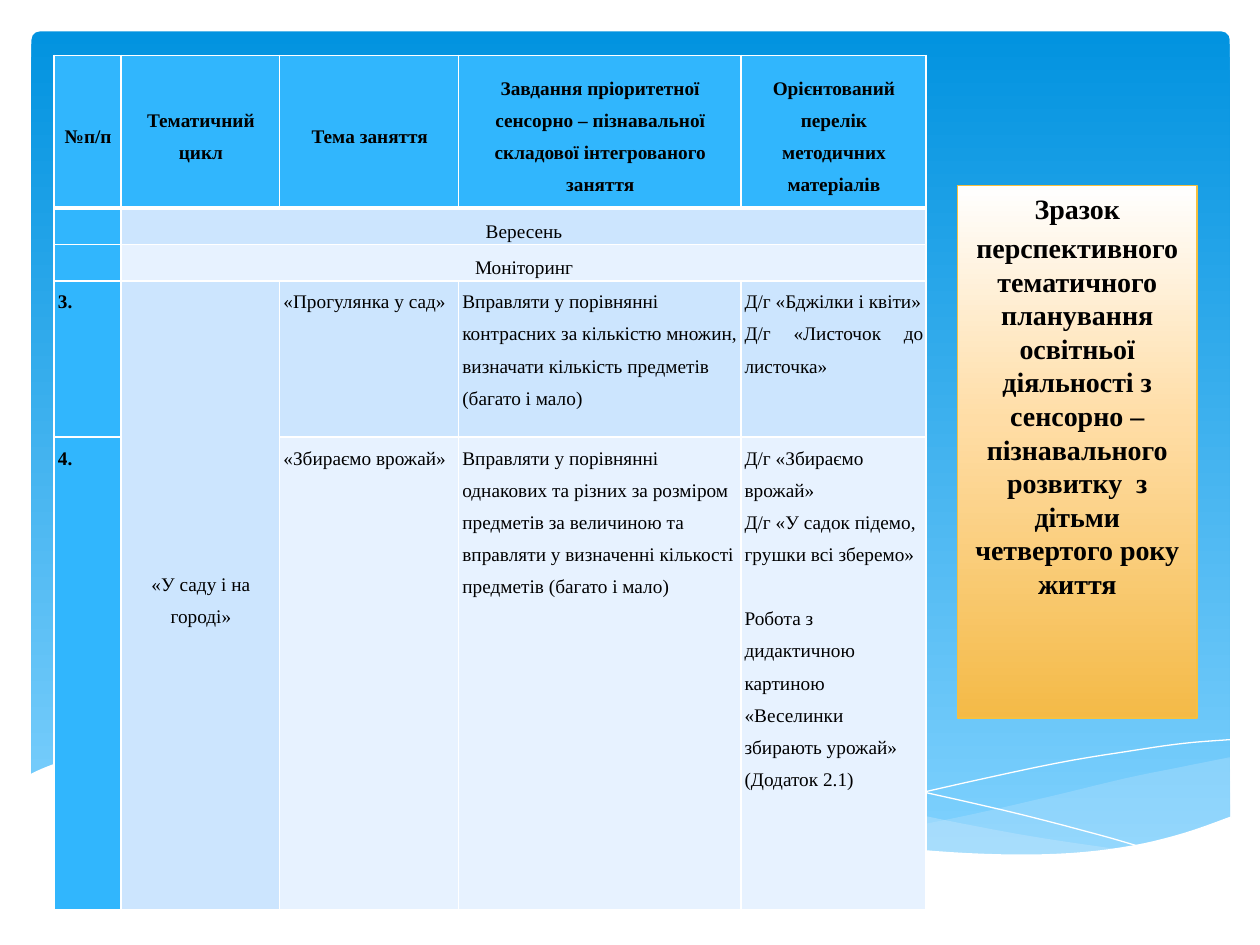
from lxml.etree import SubElement as Sub
from pptx import Presentation
from pptx.dml.color import RGBColor as RGB
from pptx.enum.shapes import MSO_SHAPE as Kind
from pptx.enum.text import MSO_ANCHOR as Anchor, PP_ALIGN as Align
from pptx.oxml.ns import qn
from pptx.util import Pt

PX = 9144  # EMU per px, 100 px to the inch
FONT = "Times New Roman"
INK = {
    "white": "FFFFFF", "black": "000000", "deep": "0293E0", "sky": "81D2FE",
    "mist": "C6E7FC", "head": "31B6FD", "band": "CCE5FE", "pale": "E7F2FF",
    "cream": "FFDDA6", "amber": "F4BA47", "gold": "F5C040",
}

COLS = [53, 126, 142, 224, 147]
ROWS = [121, 29, 29, 124, 375]
HEADS = [
    ["№п/п"],
    ["Тематичний", "цикл"],
    ["Тема заняття"],
    ["Завдання пріоритетної сенсорно – пізнавальної складової інтегрованого заняття"],
    ["Орієнтований перелік", "методичних матеріалів"],
]
BODY = [
    [[], ["Вересень"], [], [], []],
    [[], ["Моніторинг"], [], [], []],
    [["3."], ["«У саду і на", "городі»"], ["«Прогулянка у сад»"],
     ["Вправляти у порівнянні контрасних за кількістю множин, "
      "визначати кількість предметів (багато і мало)"],
     ["Д/г «Бджілки і квіти»", "Д/г «Листочок до листочка»"]],
    [["4."], [], ["«Збираємо врожай»"],
     ["Вправляти у порівнянні однакових та різних за розміром предметів за "
      "величиною та вправляти у визначенні кількості предметів (багато і мало)"],
     ["Д/г «Збираємо врожай»", "Д/г «У садок підемо, грушки всі зберемо»",
      "Робота з дидактичною картиною «Веселинки збирають урожай»",
      "(Додаток 2.1)"]],
]
TITLE = ["Зразок", "перспективного тематичного планування освітньої діяльності з "
         "сенсорно – пізнавального розвитку  з дітьми четвертого року життя"]

# Each wave is a list of runs; a run is smoothed, runs are joined by lines.
RIGHT = [[(976, 601), (936, 609), (892, 618), (834, 632), (754, 650), (662, 667)],
         [(662, 667), (719, 674), (782, 679), (836, 679), (882, 675),
          (922, 667), (951, 659), (977, 649)]]
LONG = [[(894, 675), (808, 662), (707, 642), (630, 624), (555, 607), (489, 596),
         (420, 589), (345, 588), (287, 593)],
        [(287, 593), (363, 604), (450, 624), (530, 642), (619, 660), (710, 674),
         (786, 680), (849, 679), (894, 675)]]
FALL = [[(310, 597), (363, 590), (433, 589), (511, 594), (609, 606), (696, 621),
         (796, 643), (870, 662), (908, 673)]]
RISE = [[(614, 659), (673, 643), (749, 625), (837, 606), (897, 596), (939, 590),
         (976, 587)]]
FRONT = [[(977, 648), (940, 661), (899, 671), (850, 677), (793, 678), (726, 674),
          (648, 664), (555, 647), (447, 622), (365, 604), (292, 592), (211, 586),
          (146, 587), (95, 593), (59, 601), (36, 609), (23, 615)],
         [(23, 731), (977, 731)]]


def smooth(run, steps=5):
    """Points of a Catmull-Rom curve through the run."""
    if len(run) < 3:
        return run
    pts = [run[0], *run, run[-1]]
    out = [run[0]]
    for quad in zip(pts, pts[1:], pts[2:], pts[3:]):
        for k in range(1, steps + 1):
            t = k / steps
            out.append(tuple(
                (2 * b + (c - a) * t + (2 * a - 5 * b + 4 * c - d) * t ** 2
                 + (3 * b - a - 3 * c + d) * t ** 3) / 2
                for a, b, c, d in zip(*quad)))
    return out


def write(frame, lines, size=11, bold=False, align=Align.LEFT, lead=None, gaps=()):
    """Fill the frame; gaps gives the space before a paragraph, by index."""
    frame.word_wrap = True
    gaps = dict(gaps)
    for i, line in enumerate(lines):
        para = frame.add_paragraph() if i else frame.paragraphs[0]
        para.alignment, para.line_spacing = align, lead
        if i in gaps:
            para.space_before = Pt(gaps[i])
        run = para.add_run()
        run.text = line
        run.font.name, run.font.size, run.font.bold = FONT, Pt(size), bold
        run.font.color.rgb = RGB.from_string(INK["black"])


class Deck:
    def __init__(self, wide, high):
        self.show = Presentation()
        self.show.slide_width, self.show.slide_height = wide * PX, high * PX
        self.slide = self.show.slides.add_slide(self.show.slide_layouts[6])
        self.shapes = self.slide.shapes

    def paint(self, shape, fill=None, alpha=None, line=None):
        shape.shadow.inherit = False
        if fill:
            shape.fill.solid()
            shape.fill.fore_color.rgb = RGB.from_string(INK[fill])
        else:
            shape.fill.background()
        if alpha:
            tint = shape._element.spPr.find(".//" + qn("a:srgbClr"))
            Sub(tint, qn("a:alpha"), val=str(alpha * 1000))
        if line:
            shape.line.color.rgb = RGB.from_string(INK[line])
            shape.line.width = Pt(0.75)
        else:
            shape.line.fill.background()

    def panel(self, kind, box, stops, line=None):
        """A shape with a gradient that runs from top to bottom."""
        shape = self.shapes.add_shape(kind, *(n * PX for n in box))
        self.paint(shape, line=line)
        shape.fill.gradient()
        shape.fill.gradient_angle = 270
        ramp = shape._element.spPr.find(".//" + qn("a:gsLst"))
        for old in list(ramp):
            ramp.remove(old)
        for pos, name in stops:
            stop = Sub(ramp, qn("a:gs"), pos=str(pos * 1000))
            Sub(stop, qn("a:srgbClr"), val=INK[name])
        return shape

    def wave(self, runs, **look):
        pts = [(x * PX, y * PX) for run in runs for x, y in smooth(run)]
        path = self.shapes.build_freeform(*pts[0])
        path.add_line_segments(pts[1:], close="fill" in look)
        self.paint(path.convert_to_shape(), **look)

    def edge(self, cell, head, under):
        props = cell._tc.get_or_add_tcPr()
        for i, side in enumerate("LRTB"):
            thick = 3 if (head and side == "B") or (under and side == "T") else 1
            line = Sub(props, qn("a:ln" + side), w=str(Pt(thick)))
            Sub(Sub(line, qn("a:solidFill")), qn("a:srgbClr"), val=INK["white"])
            props.insert(i, line)

    def table(self, left, top):
        grid = self.shapes.add_table(len(ROWS), len(COLS), left * PX, top * PX,
                                     sum(COLS) * PX, sum(ROWS) * PX).table
        for col, size in zip(grid.columns, COLS):
            col.width = size * PX
        for row, size in zip(grid.rows, ROWS):
            row.height = size * PX
        for r, row in enumerate([HEADS, *BODY]):
            for c, lines in enumerate(row):
                self.cell(grid.cell(r, c), r, c, lines)
        for r in (1, 2):
            grid.cell(r, 1).merge(grid.cell(r, 4))
        grid.cell(3, 1).merge(grid.cell(4, 1))

    def cell(self, cell, r, c, lines):
        head = r == 0
        mid = head or c == 1
        tone = "head" if head or c == 0 else "band" if r % 2 or c == 1 and r > 2 else "pale"
        cell.fill.solid()
        cell.fill.fore_color.rgb = RGB.from_string(INK[tone])
        cell.margin_left, cell.margin_right = 3 * PX, 2 * PX
        cell.margin_top = cell.margin_bottom = 0
        cell.vertical_anchor = Anchor.MIDDLE if mid else Anchor.TOP
        self.edge(cell, head, r == 1)
        align = Align.CENTER if mid else Align.JUSTIFY if (r, c) == (3, 4) else Align.LEFT
        if lines:
            write(cell.text_frame, lines, bold=head or c == 0, align=align, lead=1.5,
                  gaps={2: 18.4} if len(lines) > 2 else ())
        else:
            Sub(cell.text_frame.paragraphs[0]._p, qn("a:endParaRPr"), sz="1100")


def main():
    deck = Deck(1000, 750)
    back = deck.panel(Kind.ROUNDED_RECTANGLE, (25, 25, 951, 660),
                      [(0, "deep"), (100, "sky")])
    back.adjustments[0] = 0.01
    deck.wave(RIGHT, fill="mist", alpha=29)
    deck.wave(LONG, fill="mist", alpha=40)
    deck.wave(FALL, line="white")
    deck.wave(RISE, line="white")
    deck.wave(FRONT, fill="white")
    card = deck.panel(Kind.RECTANGLE, (760, 147, 190, 423),
                      [(0, "white"), (44, "cream"), (100, "amber")], line="gold")
    card.text_frame.vertical_anchor = Anchor.TOP
    write(card.text_frame, TITLE, size=16, bold=True, align=Align.CENTER, gaps={1: 3.2})
    deck.table(43, 44)
    deck.show.save("out.pptx")


if __name__ == "__main__":
    main()
